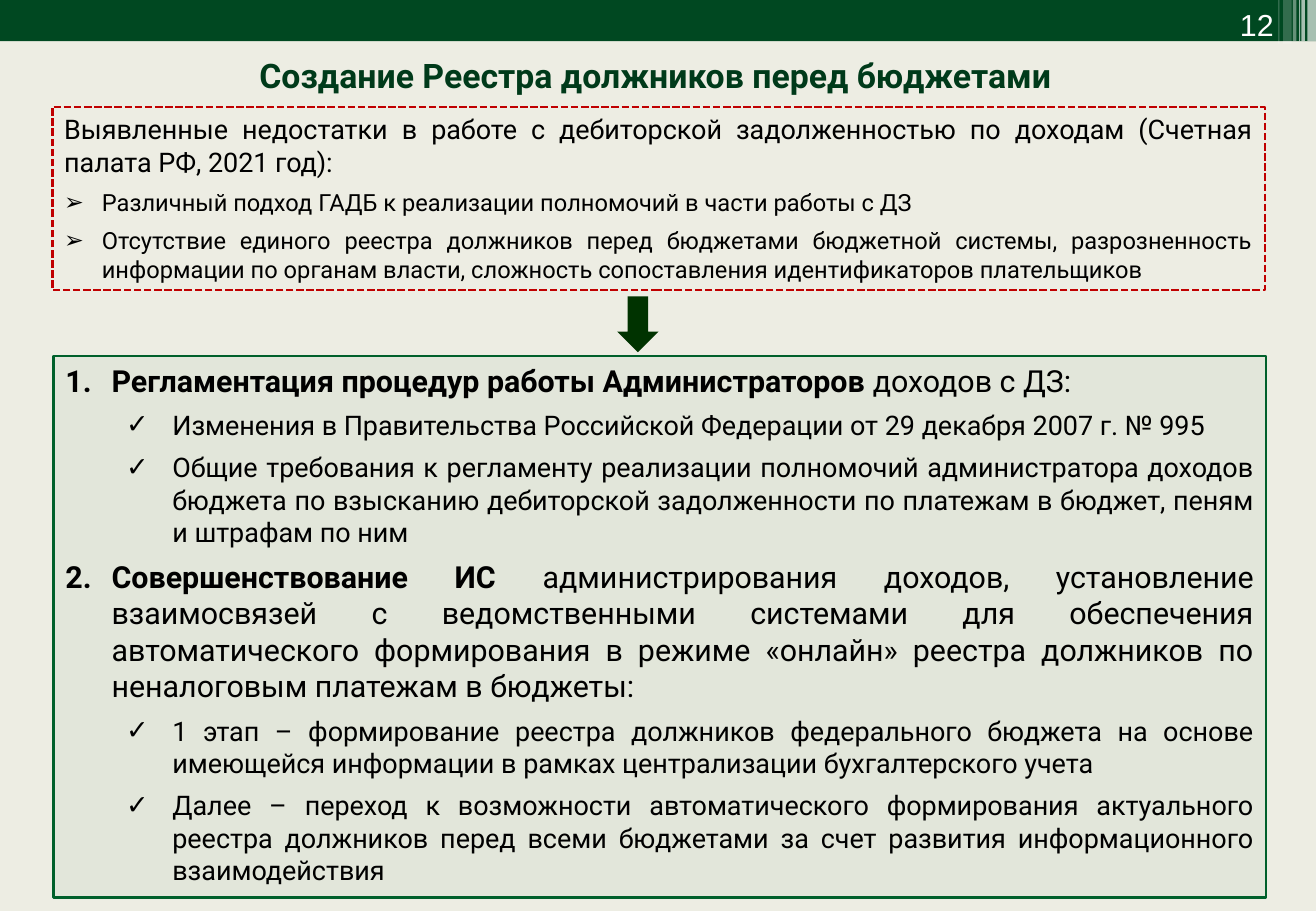
from dataclasses import dataclass
from typing import Optional

from lxml.etree import SubElement
from pptx import Presentation
from pptx.dml.color import RGBColor
from pptx.enum.dml import MSO_LINE
from pptx.enum.shapes import MSO_SHAPE as Shape
from pptx.enum.text import MSO_ANCHOR as Anchor, PP_ALIGN as Align
from pptx.oxml.ns import qn
from pptx.util import Emu, Pt

PX = 9144  # 100 px to the inch
BLACK, WHITE = "000000", "FFFFFF"
DARK_GREEN = "004821"


@dataclass(frozen=True)
class Box:
    left: int
    top: int
    width: int
    height: int

    def emu(self) -> tuple:
        return tuple(Emu(n * PX) for n in (self.left, self.top, self.width, self.height))


@dataclass(frozen=True)
class Strip:
    left: int
    width: int
    height: int
    opacity: int


@dataclass(frozen=True)
class Style:
    size: int
    font: str = "Roboto"
    color: str = BLACK
    align: Align = Align.JUSTIFY
    after: int = 6
    level: int = 0
    margin: int = 0
    hanging: int = 0
    bullet: str = ""
    numbered: bool = False


@dataclass(frozen=True)
class Item:
    style: Style
    text: str
    bold: str = ""  # bold lead-in before the plain text


PAGE_NUMBER = Style(18, font="Arial", color=WHITE, align=Align.RIGHT, after=0)
TITLE = Style(20, color="003A1A", align=Align.CENTER, after=0)
INTRO = Style(16)
FINDING = Style(14, margin=31, hanging=31, bullet="➢")
MEASURE = Style(18, margin=38, hanging=38, numbered=True)
STEP = Style(16, level=1, margin=88, hanging=38, bullet="✓")

STRIPS = [
    Strip(1076, 7, 34, 65),
    Strip(1071, 3, 34, 65),
    Strip(1069, 1, 34, 60),
    Strip(1064, 3, 34, 40),
    Strip(1056, 7, 36, 20),
    Strip(1052, 1, 36, 30),
]

FINDINGS = [
    Item(INTRO, "Выявленные недостатки в работе с дебиторской задолженностью по доходам "
                "(Счетная палата РФ, 2021 год):"),
    Item(FINDING, "Различный подход ГАДБ к реализации полномочий в части работы с ДЗ"),
    Item(FINDING, "Отсутствие единого реестра должников перед бюджетами бюджетной системы, "
                  "разрозненность информации по органам власти, сложность сопоставления "
                  "идентификаторов плательщиков"),
]

MEASURES = [
    Item(MEASURE, "доходов с ДЗ:", bold="Регламентация процедур работы Администраторов "),
    Item(STEP, "Изменения в Правительства Российской Федерации от 29 декабря 2007 г. № 995"),
    Item(STEP, "Общие требования к регламенту реализации полномочий администратора доходов "
               "бюджета по взысканию дебиторской задолженности по платежам в бюджет, пеням "
               "и штрафам по ним"),
    Item(MEASURE, "администрирования доходов, установление взаимосвязей с ведомственными "
                  "системами для обеспечения автоматического формирования в режиме «онлайн» "
                  "реестра должников по неналоговым платежам в бюджеты:",
         bold="Совершенствование ИС "),
    Item(STEP, "1 этап – формирование реестра должников федерального бюджета на основе "
               "имеющейся информации в рамках централизации бухгалтерского учета"),
    Item(STEP, "Далее – переход к возможности автоматического формирования актуального "
               "реестра должников перед всеми бюджетами за счет развития информационного "
               "взаимодействия"),
]


def rgb(color: str) -> RGBColor:
    return RGBColor.from_string(color)


def add_block(slide, box: Box, fill: Optional[str] = None, line: Optional[str] = None,
              kind: Shape = Shape.RECTANGLE, opacity: int = 100):
    shape = slide.shapes.add_shape(kind, *box.emu())
    shape.shadow.inherit = False
    if fill:
        shape.fill.solid()
        shape.fill.fore_color.rgb = rgb(fill)
        if opacity < 100:
            color = shape.fill._xPr.find(".//" + qn("a:srgbClr"))
            SubElement(color, qn("a:alpha"), val=str(opacity * 1000))
    else:
        shape.fill.background()
    if line:
        shape.line.color.rgb = rgb(line)
        shape.line.width = Pt(1.5)
    else:
        shape.line.fill.background()
    return shape


def add_run(paragraph, text: str, style: Style, bold: bool) -> None:
    run = paragraph.add_run()
    run.text = text
    run.font.name = style.font
    run.font.size = Pt(style.size)
    run.font.bold = bold
    run.font.color.rgb = rgb(style.color)


def format_paragraph(paragraph, style: Style) -> None:
    paragraph.alignment = style.align
    paragraph.level = style.level
    paragraph.space_after = Pt(style.after)
    properties = paragraph._p.get_or_add_pPr()
    properties.set("marL", str(style.margin * PX))
    properties.set("indent", str(-style.hanging * PX))
    if style.numbered:
        SubElement(properties, qn("a:buFont"), typeface=style.font)
        SubElement(properties, qn("a:buAutoNum"), type="arabicPeriod")
    elif style.bullet:
        SubElement(properties, qn("a:buFont"), typeface="Arial")
        SubElement(properties, qn("a:buChar"), char=style.bullet)


def write(shape, items: list[Item], anchor: Anchor = Anchor.TOP) -> None:
    frame = shape.text_frame
    frame.word_wrap = True
    frame.vertical_anchor = anchor
    for index, item in enumerate(items):
        paragraph = frame.add_paragraph() if index else frame.paragraphs[0]
        format_paragraph(paragraph, item.style)
        if item.bold:
            add_run(paragraph, item.bold, item.style, True)
        if item.text:
            add_run(paragraph, item.text, item.style, False)


def main() -> None:
    presentation = Presentation()
    presentation.slide_width = Emu(1083 * PX)
    presentation.slide_height = Emu(750 * PX)
    slide = presentation.slides.add_slide(presentation.slide_layouts[6])
    slide.background.fill.solid()
    slide.background.fill.fore_color.rgb = rgb("EDEDE3")

    # Header band with light strips at its right end
    add_block(slide, Box(0, 0, 1083, 34), DARK_GREEN)
    for strip in STRIPS:
        add_block(slide, Box(strip.left, 0, strip.width, strip.height), WHITE,
                  opacity=strip.opacity)

    # Page number and title
    number = slide.shapes.add_textbox(*Box(968, 0, 90, 40).emu())
    write(number, [Item(PAGE_NUMBER, "12")], Anchor.BOTTOM)
    title = slide.shapes.add_textbox(*Box(61, 40, 957, 44).emu())
    write(title, [Item(TITLE, "", bold="Создание Реестра должников перед бюджетами")])

    # Findings, arrow, measures
    findings = add_block(slide, Box(43, 88, 998, 151), line="C00000")
    findings.line.dash_style = MSO_LINE.SQUARE_DOT
    write(findings, FINDINGS)
    add_block(slide, Box(508, 244, 34, 46), "003300", kind=Shape.DOWN_ARROW)
    measures = add_block(slide, Box(44, 293, 998, 446), "E2E6DA", "00602B")
    write(measures, MEASURES)

    presentation.save("out.pptx")


if __name__ == "__main__":
    main()
